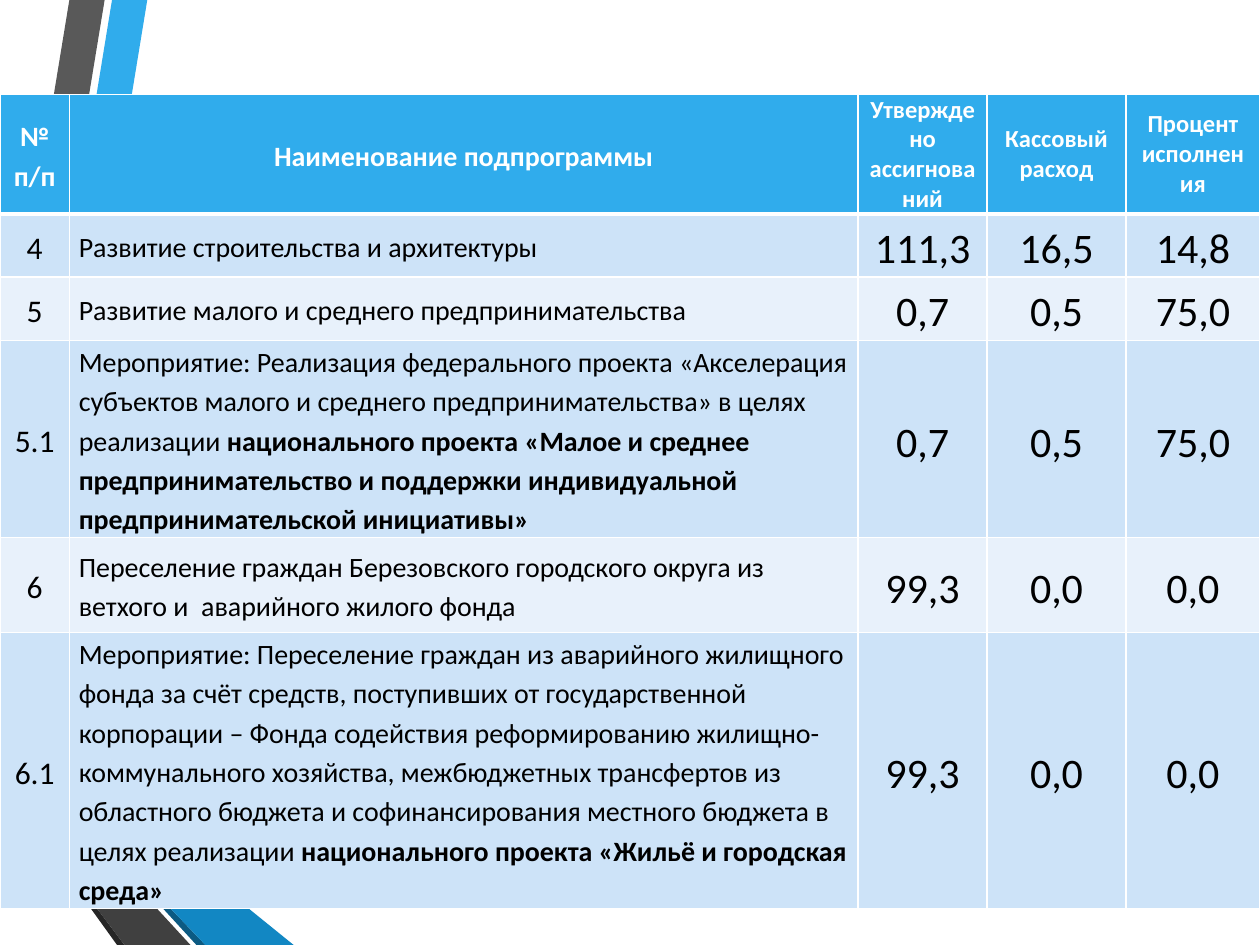
from lxml.etree import SubElement
from pptx import Presentation
from pptx.dml.color import RGBColor
from pptx.enum.text import MSO_ANCHOR as Anchor, PP_ALIGN as Align
from pptx.oxml.ns import qn
from pptx.util import Cm, Pt

COLORS = {
    "white": "FFFFFF", "black": "000000",
    "blue": "30ACEC", "mid_blue": "1287C3", "deep_blue": "0C5A82",
    "gray": "595959", "dark_gray": "404040", "near_black": "262626",
    "band_dark": "CDE3F8", "band_light": "E8F1FB",
}
FONT = "Calibri"

# Corner points in centimetres, from back to front
STRIPES = [
    ("blue", [(0, 13.82), (0, 14.61), (0.56, 14.71), (2.97, 0), (2.26, 0)]),
    ("gray", [(2.11, 0), (1.4, 0), (0, 8.53), (0, 12.85)]),
    ("near_black", [(0, 15.72), (0, 15.77), (2.36, 19.05), (2.51, 19.05)]),
    ("deep_blue", [(0, 14.71), (0, 14.73), (3.96, 19.05), (4.14, 19.05)]),
    ("mid_blue", [(0, 14.71), (4.14, 19.05), (5.92, 19.05), (0.56, 14.71), (0, 14.61)]),
    ("dark_gray", [(0, 15.72), (2.51, 19.05), (3.84, 19.05), (0, 14.88)]),
]

COLUMN_WIDTHS = [1.4, 15.9, 2.6, 2.8, 2.7]
ROW_HEIGHTS = [2.39, 1.27, 1.28, 3.95, 1.92, 5.56]
HEADERS = ["№ п/п", "Наименование подпрограммы", "Утверждено ассигнований",
           "Кассовый расход", "Процент исполнения"]
HEADER_SIZES = [16, 16, 14, 14, 14]
BODY_SIZES = [18, 16, 24, 24, 24]

# Number, plain part of the name, bold part of the name, three values
PROGRAMMES = [
    ("4", "Развитие строительства и архитектуры", "", "111,3", "16,5", "14,8"),
    ("5", "Развитие малого и среднего предпринимательства", "", "0,7", "0,5", "75,0"),
    ("5.1", "Мероприятие: Реализация федерального проекта «Акселерация субъектов малого "
     "и среднего предпринимательства» в целях реализации ",
     "национального проекта «Малое и среднее предпринимательство и поддержки "
     "индивидуальной предпринимательской инициативы»", "0,7", "0,5", "75,0"),
    ("6", "Переселение граждан Березовского городского округа из ветхого и  аварийного "
     "жилого фонда", "", "99,3", "0,0", "0,0"),
    ("6.1", "Мероприятие: Переселение граждан из аварийного жилищного фонда за счёт средств, "
     "поступивших от государственной корпорации – Фонда содействия реформированию "
     "жилищно-коммунального хозяйства, межбюджетных трансфертов из областного бюджета и "
     "софинансирования местного бюджета в целях реализации ",
     "национального проекта «Жильё и городская среда»", "99,3", "0,0", "0,0"),
]


def rgb(name):
    return RGBColor.from_string(COLORS[name])


def add_stripes(page, left, top):
    for color, corners in STRIPES:
        points = [(Cm(left + x), Cm(top + y)) for x, y in corners]
        builder = page.shapes.build_freeform(*points[0])
        builder.add_line_segments(points[1:])
        stripe = builder.convert_to_shape()
        stripe.shadow.inherit = False
        stripe.fill.solid()
        stripe.fill.fore_color.rgb = rgb(color)
        stripe.line.fill.background()


def set_borders(cell, top=1, bottom=1):
    """Draw white cell borders; widths are in points."""
    properties = cell._tc.get_or_add_tcPr()
    for side, width in (("L", 1), ("R", 1), ("T", top), ("B", bottom)):
        line = SubElement(properties, qn(f"a:ln{side}"), w=str(Pt(width)))
        fill = SubElement(line, qn("a:solidFill"))
        SubElement(fill, qn("a:srgbClr"), val=COLORS["white"])


def fill_cell(cell, parts, size, color, background, align, spacing, bold=False):
    """Write the parts as runs; every part after the first is bold."""
    cell.fill.solid()
    cell.fill.fore_color.rgb = rgb(background)
    cell.vertical_anchor = Anchor.MIDDLE
    cell.margin_left = cell.margin_right = Cm(0.19)
    cell.margin_top = cell.margin_bottom = 0
    para = cell.text_frame.paragraphs[0]
    para.alignment = align
    para.line_spacing = spacing
    for index, text in enumerate(parts):
        span = para.add_run()
        span.text = text
        span.font.name = FONT
        span.font.size = Pt(size)
        span.font.bold = bold or index > 0
        span.font.color.rgb = rgb(color)


def add_programme_table(page, left, top):
    frame = page.shapes.add_table(
        len(ROW_HEIGHTS), len(COLUMN_WIDTHS), Cm(left), Cm(top),
        Cm(sum(COLUMN_WIDTHS)), Cm(sum(ROW_HEIGHTS)))
    table = frame.table
    table.first_row = table.horz_banding = False
    for column, width in zip(table.columns, COLUMN_WIDTHS):
        column.width = Cm(width)
    for row, height in zip(table.rows, ROW_HEIGHTS):
        row.height = Cm(height)

    for index, (header, size) in enumerate(zip(HEADERS, HEADER_SIZES)):
        cell = table.cell(0, index)
        set_borders(cell, bottom=3)
        fill_cell(cell, [header], size, "white", "blue", Align.CENTER,
                  1.15 if index < 2 else 1.0, bold=True)

    for number, (code, name, project, *values) in enumerate(PROGRAMMES, start=1):
        band = "band_dark" if number % 2 else "band_light"
        name_parts = [name, project] if project else [name]
        contents = [[code], name_parts] + [[value] for value in values]
        for index, (parts, size) in enumerate(zip(contents, BODY_SIZES)):
            cell = table.cell(number, index)
            set_borders(cell, top=3 if number == 1 else 1)
            align = Align.LEFT if index == 1 else Align.CENTER
            fill_cell(cell, parts, size, "black", band, align, 1.15)


def main():
    deck = Presentation()
    deck.slide_width, deck.slide_height = Cm(25.4), Cm(19.05)
    page = deck.slides.add_slide(deck.slide_layouts[6])
    add_stripes(page, 0, 0)
    add_programme_table(page, 0, 1.91)
    deck.save("out.pptx")


if __name__ == "__main__":
    main()
